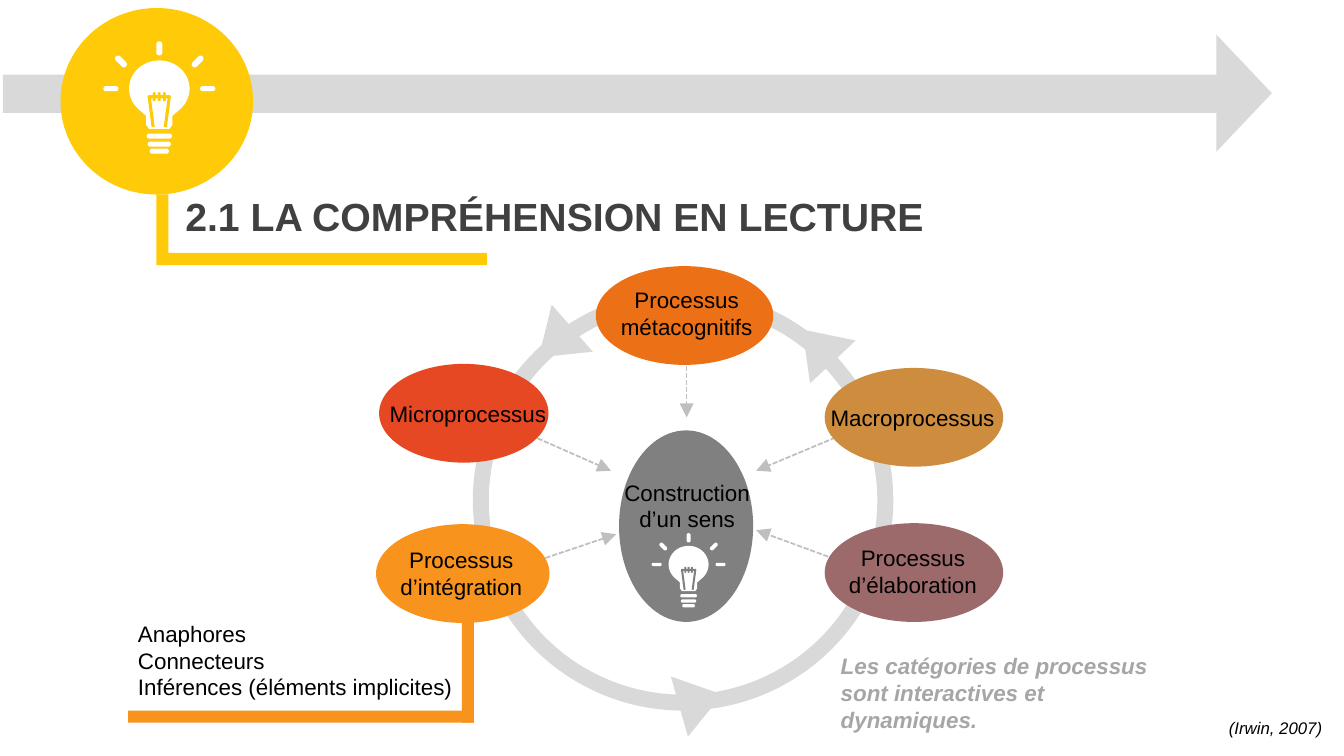
from math import copysign, cos, radians, sin

from lxml.etree import SubElement
from pptx import Presentation
from pptx.dml.color import RGBColor
from pptx.enum.dml import MSO_LINE_DASH_STYLE as Dash
from pptx.enum.shapes import MSO_CONNECTOR as Connector, MSO_SHAPE as Shape
from pptx.enum.text import MSO_AUTO_SIZE as AutoSize, PP_ALIGN as Align
from pptx.oxml.ns import qn
from pptx.util import Inches, Pt

BLACK = RGBColor(0x00, 0x00, 0x00)
WHITE = RGBColor(0xFF, 0xFF, 0xFF)
TITLE_GREY = RGBColor(0x40, 0x40, 0x40)
CORE_GREY = RGBColor(0x80, 0x80, 0x80)
NOTE_GREY = RGBColor(0xA6, 0xA6, 0xA6)
ARROW_GREY = RGBColor(0xBF, 0xBF, 0xBF)
PALE_GREY = RGBColor(0xD9, 0xD9, 0xD9)
YELLOW = RGBColor(0xFF, 0xCA, 0x08)
ORANGE = RGBColor(0xF8, 0x93, 0x1D)
DARK_ORANGE = RGBColor(0xEC, 0x70, 0x16)
RED = RGBColor(0xE6, 0x48, 0x23)
OCHRE = RGBColor(0xCE, 0x8D, 0x3E)
MAUVE = RGBColor(0x9C, 0x6A, 0x6A)

PROCESSES = [
    ("Microprocessus", RED, (3.76, 3.61, 1.68, 0.98), (3.53, 3.92, 2.22, 0.37)),
    ("Macroprocessus", OCHRE, (8.18, 3.65, 1.77, 0.98), (7.94, 3.96, 2.22, 0.37)),
    ("Processus métacognitifs", DARK_ORANGE, (5.91, 2.64, 1.76, 0.98), (5.7, 2.79, 2.22, 0.64)),
    ("Processus d’intégration", ORANGE, (3.73, 5.2, 1.72, 0.98), (3.73, 5.37, 1.69, 0.64)),
    ("Processus d’élaboration", MAUVE, (8.18, 5.19, 1.77, 0.98), (8.29, 5.35, 1.53, 0.64)),
    ("Construction d’un sens", CORE_GREY, (6.14, 4.27, 1.33, 1.9), (6.05, 4.7, 1.53, 0.64)),
]
ARROWS = [
    ((4.95, 4.18), (6.06, 4.67)),
    ((6.81, 3.42), (6.81, 4.14)),
    ((8.67, 4.18), (7.5, 4.67)),
    ((8.67, 5.69), (7.5, 5.26)),
    ((4.95, 5.69), (6.11, 5.3)),
]
RING_HEADS = [(6.64, 6.73, 74.2), (7.8, 3.21, 316.8), (5.2, 3.18, 228.9)]
BULB_RAYS = [
    (0, -0.4, 0.06, 0.14, 0),
    (-0.48, 0, 0.15, 0.05, 0),
    (0.48, 0, 0.15, 0.05, 0),
    (-0.38, -0.27, 0.14, 0.06, 45),
    (0.38, -0.27, 0.14, 0.06, -45),
]
BULB_BASE = [(0, 0.47, 0.25, 0.05, 0), (0, 0.55, 0.23, 0.05, 0), (0, 0.62, 0.19, 0.05, 0)]
BULB_COILS = [(x, 0.08, 0.03, 0.09, 0) for x in (-0.05, 0, 0.05)]
BULB_GLOBE = [(0.3 * cos(radians(a)), 0.28 * sin(radians(a))) for a in range(135, 406, 6)]
BULB_NECK = [(0.13, 0.27), (0.13, 0.36), (0.1, 0.4), (-0.1, 0.4), (-0.13, 0.36), (-0.13, 0.27)]
BULB_FILAMENT = [(-0.06, 0.38), (-0.1, 0.08), (0.1, 0.08), (0.06, 0.38)]


def add_figure(page, kind, place, colour, rotation=0, adjustment=None):
    figure = page.shapes.add_shape(kind, *map(Inches, place))
    figure.shadow.inherit = False
    figure.fill.solid()
    figure.fill.fore_color.rgb = colour
    figure.line.fill.background()
    figure.rotation = rotation
    if adjustment is not None:
        figure.adjustments[0] = adjustment


def add_text(page, place, lines, colour=BLACK, size=16, align=Align.LEFT, **style):
    box = page.shapes.add_textbox(*map(Inches, place))
    frame = box.text_frame
    frame.word_wrap = True
    frame.auto_size = AutoSize.SHAPE_TO_FIT_TEXT
    formats = {"name": "Arial", "size": Pt(size), **style}
    for index, line in enumerate(lines):
        para = frame.paragraphs[0] if index == 0 else frame.add_paragraph()
        para.alignment = align
        span = para.add_run()
        span.text = line
        span.font.color.rgb = colour
        for name, value in formats.items():
            setattr(span.font, name, value)


def add_arrow(page, start, end):
    arrow = page.shapes.add_connector(Connector.STRAIGHT, *map(Inches, start + end))
    arrow.line.color.rgb = ARROW_GREY
    arrow.line.width = Pt(1.25)
    arrow.line.dash_style = Dash.SQUARE_DOT
    SubElement(arrow.line._get_or_add_ln(), qn("a:tailEnd"), type="triangle", w="lg", len="lg")
    SubElement(arrow._element.spPr, qn("a:effectLst"))


def pill_points(x, y, width, height, rotation):
    radius = min(width, height) / 2
    turn = radians(rotation)
    points = []
    for angle in range(5, 360, 10):
        across, down = cos(radians(angle)), sin(radians(angle))
        dx = radius * across + copysign(width / 2 - radius, across)
        dy = radius * down + copysign(height / 2 - radius, down)
        points.append((x + dx * cos(turn) - dy * sin(turn), y + dx * sin(turn) + dy * cos(turn)))
    return points


def add_outline(page, contours, centre, scale, close=True):
    placed = [[tuple(Inches(c + scale * p) for c, p in zip(centre, point)) for point in contour]
              for contour in contours]
    builder = page.shapes.build_freeform(*placed[0][0])
    for index, spots in enumerate(placed):
        if index:
            builder.move_to(*spots[0])
        builder.add_line_segments(spots[1:], close=close)
    outline = builder.convert_to_shape()
    outline.shadow.inherit = False
    return outline


def add_bulb(page, centre, scale, back):
    glass = [BULB_GLOBE + BULB_NECK] + [pill_points(*pill) for pill in BULB_RAYS + BULB_BASE]
    coils = [pill_points(*pill) for pill in BULB_COILS]
    for contours, colour in ((glass, WHITE), (coils, back)):
        outline = add_outline(page, contours, centre, scale)
        outline.fill.solid()
        outline.fill.fore_color.rgb = colour
        outline.line.fill.background()
    filament = add_outline(page, [BULB_FILAMENT], centre, scale, close=False)
    filament.fill.background()
    filament.line.color.rgb = back
    filament.line.width = Pt(2.2 * scale)


def add_bars(page, places, colour):
    for place in places:
        add_figure(page, Shape.RECTANGLE, place, colour)


def main():
    deck = Presentation()
    deck.slide_width, deck.slide_height = Inches(13.33), Inches(7.5)
    page = deck.slides.add_slide(deck.slide_layouts[6])

    add_figure(page, Shape.DONUT, (4.69, 2.88, 4.17, 4.17), PALE_GREY, adjustment=0.038)
    add_bars(page, [(0.03, 0.74, 12.06, 0.38)], PALE_GREY)
    add_figure(page, Shape.ISOSCELES_TRIANGLE, (11.76, 0.65, 1.16, 0.55), PALE_GREY, 90)
    add_bars(page, [(1.58, 2.51, 3.25, 0.12), (1.55, 1.93, 0.12, 0.7)], YELLOW)
    add_figure(page, Shape.OVAL, (0.6, 0.08, 1.91, 1.85), YELLOW)
    add_bulb(page, (1.58, 0.88), 1, YELLOW)
    add_text(page, (1.74, 1.86, 8.2, 0.57), ["2.1 LA COMPRÉHENSION EN LECTURE"],
             TITLE_GREY, 28, bold=True)

    for start, end in ARROWS:
        add_arrow(page, start, end)
    for label, colour, oval, label_place in PROCESSES:
        add_figure(page, Shape.OVAL, oval, colour)
        add_text(page, label_place, [label], align=Align.CENTER)
    add_bulb(page, (6.83, 5.6), 0.66, CORE_GREY)

    add_bars(page, [(1.27, 7.05, 3.43, 0.12), (4.58, 6.17, 0.12, 1)], ORANGE)
    add_text(page, (1.27, 6.1, 4.15, 0.91),
             ["Anaphores", "Connecteurs", "Inférences (éléments implicites)"])
    for left, top, rotation in RING_HEADS:
        add_figure(page, Shape.ISOSCELES_TRIANGLE, (left, top, 0.62, 0.44), PALE_GREY, rotation)
    add_text(page, (8.24, 6.42, 3.4, 0.91),
             ["Les catégories de processus sont interactives et dynamiques."],
             NOTE_GREY, bold=True, italic=True)
    add_text(page, (12.09, 7.07, 1.24, 0.3), ["(Irwin, 2007)"], size=12, italic=True)
    deck.save("out.pptx")


if __name__ == "__main__":
    main()
